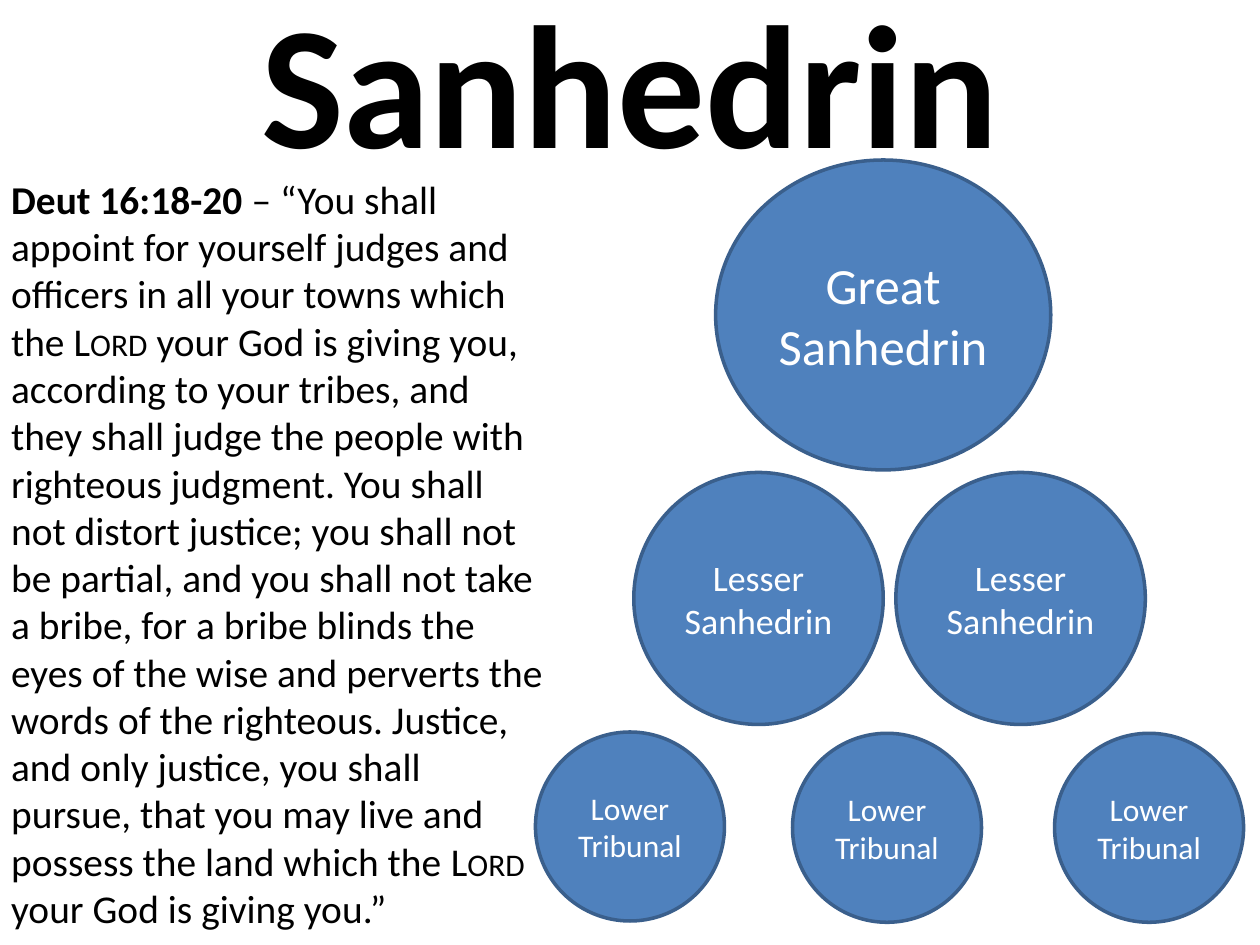
from pptx import Presentation
from pptx.dml.color import RGBColor
from pptx.enum.shapes import MSO_SHAPE as Shape
from pptx.enum.text import MSO_ANCHOR as Anchor, PP_ALIGN as Align
from pptx.util import Inches, Pt

BLACK = RGBColor(0x00, 0x00, 0x00)
WHITE = RGBColor(0xFF, 0xFF, 0xFF)
BLUE = RGBColor(0x4F, 0x81, 0xBD)
DARK_BLUE = RGBColor(0x3A, 0x5F, 0x8C)

PASSAGE = [
    ("Deut 16:18-20", "bold"),
    (" – “You shall appoint for yourself judges and officers in all your towns "
     "which the ", ""),
    ("Lord", "small caps"),
    (" your God is giving you, according to your tribes, and they shall judge the "
     "people with righteous judgment. You shall not distort justice; you shall not "
     "be partial, and you shall not take a bribe, for a bribe blinds the eyes of "
     "the wise and perverts the words of the righteous. Justice, and only justice, "
     "you shall pursue, that you may live and possess the land which the ", ""),
    ("Lord", "small caps"),
    (" your God is giving you.”", ""),
]

# Text, font size, width, height, and the left and top of each court in the tier
COURT_TIERS = [
    (["Lower Tribunal"], 18, 1.5, 1.5, [(4.25, 5.81), (6.29, 5.82), (8.37, 5.82)]),
    (["Lesser Sanhedrin"], 20.5, 1.98, 2, [(5.03, 3.75), (7.11, 3.75)]),
    (["Great", "Sanhedrin"], 29, 2.66, 2.46, [(5.68, 1.27)]),
]


def write(frame, paragraphs, size, color=BLACK, align=Align.LEFT, anchor=Anchor.TOP):
    """Fill a text frame; each paragraph is a list of (text, style) runs."""
    frame.word_wrap = True
    frame.vertical_anchor = anchor
    for index, runs in enumerate(paragraphs):
        paragraph = frame.add_paragraph() if index else frame.paragraphs[0]
        paragraph.alignment = align
        for text, style in runs:
            run = paragraph.add_run()
            run.text = text
            font = run.font
            font.name, font.size, font.bold = "Calibri", Pt(size), style == "bold"
            font.color.rgb = color
            if style == "small caps":
                run._r.get_or_add_rPr().set("cap", "small")


class SlideBuilder:
    def __init__(self, slide):
        self.slide = slide
        self.fill, self.outline, self.outline_width = BLUE, DARK_BLUE, Pt(2)

    def text(self, box, paragraphs, size, **format):
        textbox = self.slide.shapes.add_textbox(*map(Inches, box))
        write(textbox.text_frame, paragraphs, size, **format)

    def circle(self, box, lines, size):
        circle = self.slide.shapes.add_shape(Shape.OVAL, *map(Inches, box))
        circle.shadow.inherit = False
        circle.fill.solid()
        circle.fill.fore_color.rgb = self.fill
        circle.line.color.rgb = self.outline
        circle.line.width = self.outline_width
        write(circle.text_frame, [[(line, "")] for line in lines], size,
              color=WHITE, align=Align.CENTER, anchor=Anchor.MIDDLE)


def main():
    deck = Presentation()
    deck.slide_width, deck.slide_height = Inches(10), Inches(7.5)
    builder = SlideBuilder(deck.slides.add_slide(deck.slide_layouts[6]))

    builder.text((-0.01, 1.34, 4.43, 6.16), [PASSAGE], 22.5)
    builder.text((0, 0, 10, 1.25), [[("Sanhedrin", "bold")]], 100,
                 align=Align.CENTER, anchor=Anchor.MIDDLE)
    for lines, size, width, height, places in COURT_TIERS:
        for left, top in places:
            builder.circle((left, top, width, height), lines, size)

    deck.save("out.pptx")


if __name__ == "__main__":
    main()
